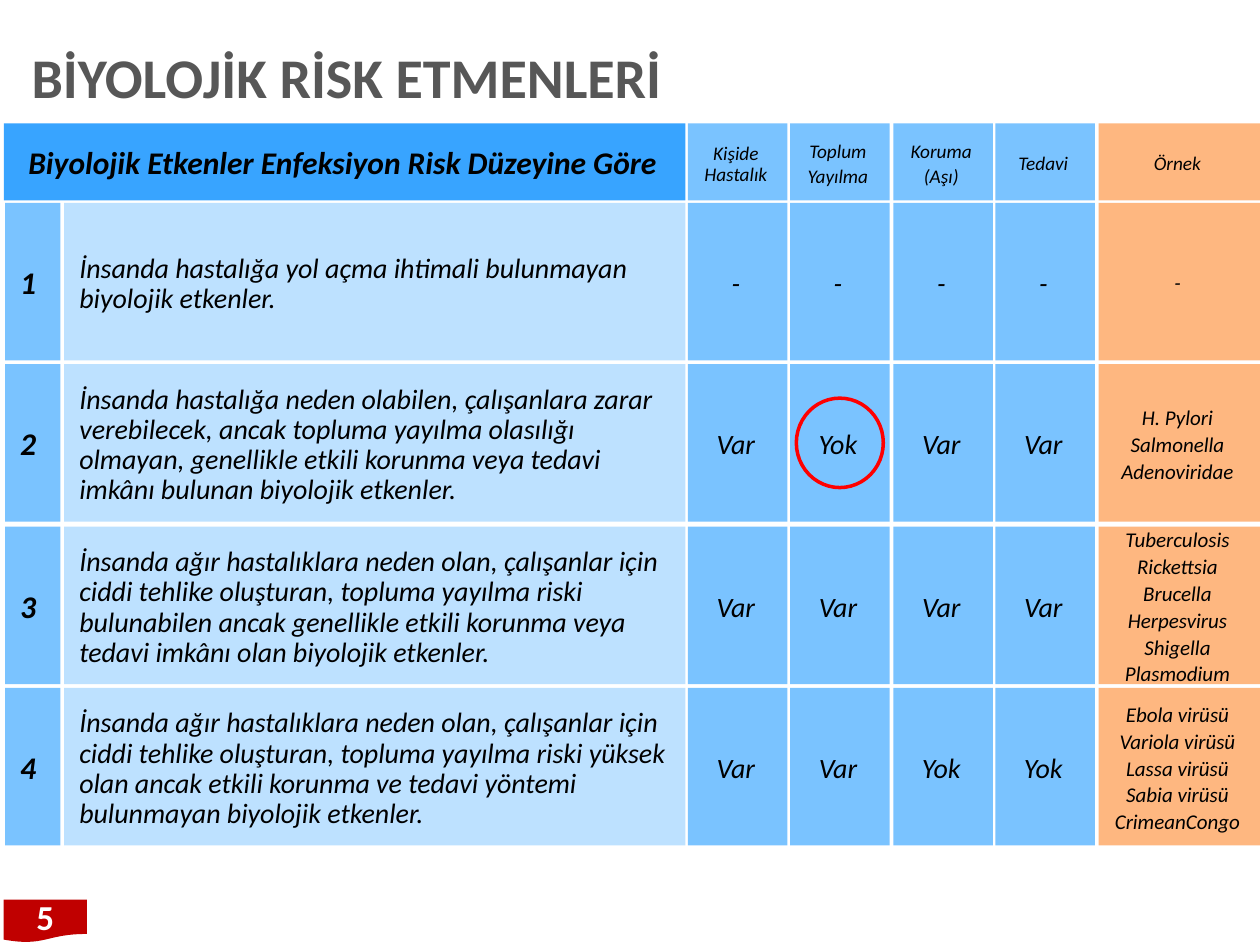
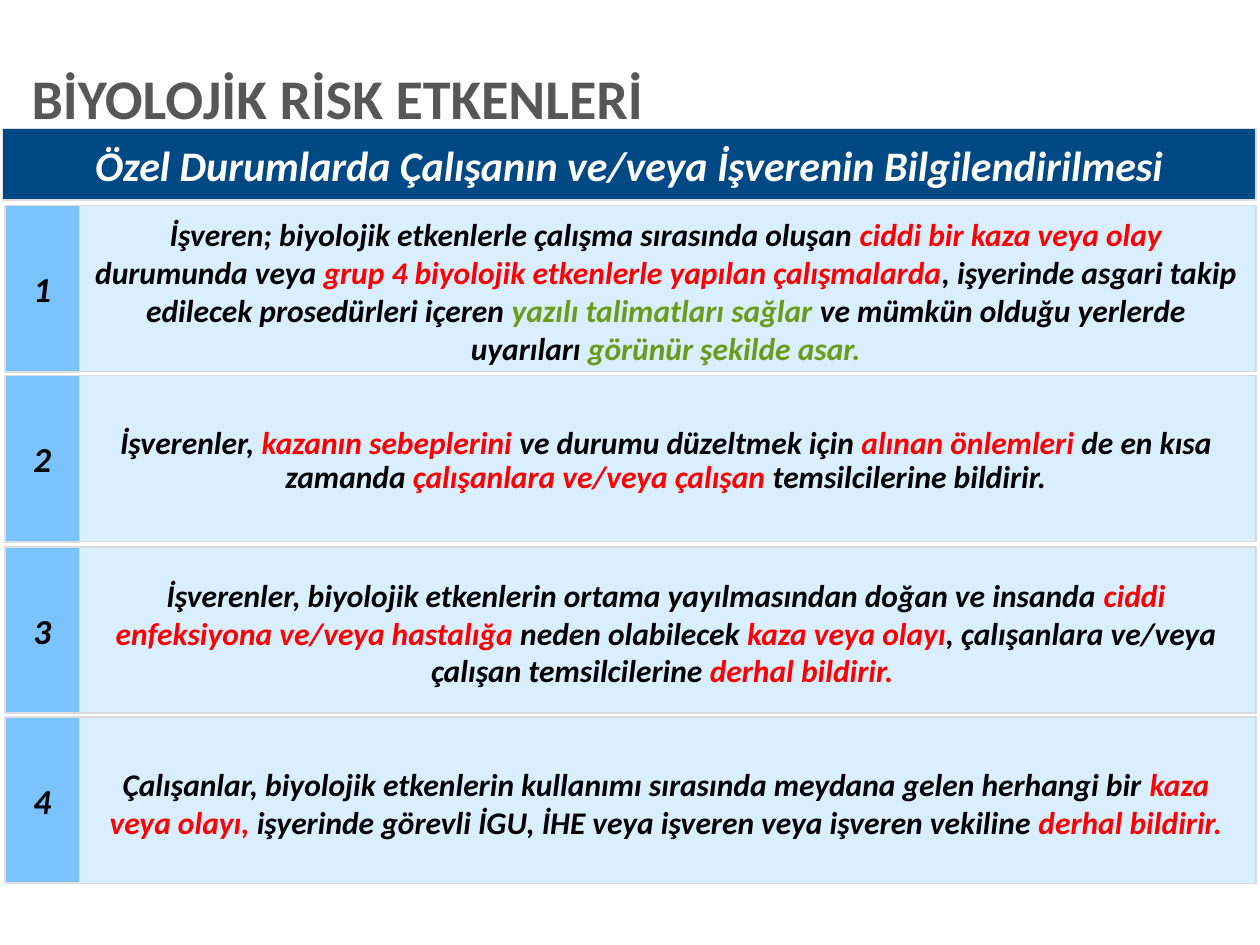
from dataclasses import dataclass, replace
from typing import NamedTuple

from lxml.etree import SubElement
from pptx import Presentation
from pptx.dml.color import RGBColor
from pptx.enum.shapes import MSO_SHAPE
from pptx.enum.text import MSO_ANCHOR, MSO_AUTO_SIZE, PP_ALIGN
from pptx.oxml.ns import qn
from pptx.util import Emu, Pt

EMU_PER_PX = 9144
FONT = "Calibri"
COLOURS = {
    "ink": "000000",
    "white": "FFFFFF",
    "title": "575757",
    "header": "38A4FF",
    "cell": "7AC3FF",
    "pale": "BDE1FF",
    "example": "FEB780",
    "banner": "004985",
    "border": "DDDDDD",
    "row_border": "D9D9D9",
    "alert": "FF0000",
    "action": "6B9B1A",
    "footer": "C00000",
}


class Area(NamedTuple):
    left: int
    top: int
    width: int
    height: int


class Span(NamedTuple):
    words: str
    colour: str = "ink"


class Border(NamedTuple):
    colour: str
    points: float


@dataclass(frozen=True)
class TextStyle:
    size: int
    bold: bool = False
    italic: bool = True
    align: PP_ALIGN = PP_ALIGN.CENTER
    line_spacing: float = 1.0
    space_after: float = 0
    margins: tuple[int, int, int, int] = (12, 12, 15, 8)


class RiskGroup(NamedTuple):
    description: str
    answers: list[str]
    examples: list[str]


class Duty(NamedTuple):
    spans: list[Span]
    line_spacing: float = 1.0
    space_after: float = 0


def compact(size: int, bold: bool = False, align: PP_ALIGN = PP_ALIGN.CENTER) -> TextStyle:
    return TextStyle(size, bold, align=align, line_spacing=0.9, space_after=size * 0.2)


TITLE = TextStyle(32, True, False, PP_ALIGN.LEFT, line_spacing=0.9, margins=(0, 5, 0, 5))
NUMBER = compact(18, True, PP_ALIGN.LEFT)
DESCRIPTION = compact(16, align=PP_ALIGN.LEFT)
ANSWER = compact(16)
EXAMPLE = compact(12)
COLUMN_HEAD = compact(11)
TABLE_HEAD = compact(18, True)
DUTY = TextStyle(18, True)
DUTY_NUMBER = TextStyle(20, True, margins=(0, 0, 0, 0))
BANNER = replace(DUTY_NUMBER, size=24)
PAGE_NUMBER = TextStyle(20, True, False, margins=(10, 5, 10, 5))

COLUMN_HEADS = [["Kişide Hastalık"], ["Toplum", "Yayılma"], ["Koruma", "(Aşı)"], ["Tedavi"]]
RISK_GROUPS = [
    RiskGroup(
        "İnsanda hastalığa yol açma ihtimali bulunmayan biyolojik etkenler.",
        ["-", "-", "-", "-"],
        ["-"],
    ),
    RiskGroup(
        "İnsanda hastalığa neden olabilen, çalışanlara zarar verebilecek, ancak topluma "
        "yayılma olasılığı olmayan, genellikle etkili korunma veya tedavi imkânı bulunan "
        "biyolojik etkenler.",
        ["Var", "Yok", "Var", "Var"],
        ["H. Pylori", "Salmonella", "Adenoviridae"],
    ),
    RiskGroup(
        "İnsanda ağır hastalıklara neden olan, çalışanlar için ciddi tehlike oluşturan, "
        "topluma yayılma riski bulunabilen ancak genellikle etkili korunma veya tedavi "
        "imkânı olan biyolojik etkenler.",
        ["Var", "Var", "Var", "Var"],
        ["Tuberculosis", "Rickettsia", "Brucella", "Herpesvirus", "Shigella", "Plasmodium"],
    ),
    RiskGroup(
        "İnsanda ağır hastalıklara neden olan, çalışanlar için ciddi tehlike oluşturan, "
        "topluma yayılma riski yüksek olan ancak etkili korunma ve tedavi yöntemi "
        "bulunmayan biyolojik etkenler.",
        ["Var", "Var", "Yok", "Yok"],
        ["Ebola virüsü", "Variola virüsü", "Lassa virüsü", "Sabia virüsü", "CrimeanCongo"],
    ),
]
DUTIES = [
    Duty([
        Span("İşveren; biyolojik etkenlerle çalışma sırasında oluşan "),
        Span("ciddi bir kaza veya olay ", "alert"),
        Span("durumunda veya "),
        Span("grup 4 biyolojik etkenlerle yapılan çalışmalarda", "alert"),
        Span(", işyerinde asgari takip edilecek prosedürleri içeren "),
        Span("yazılı talimatları sağlar ", "action"),
        Span("ve mümkün olduğu yerlerde uyarıları "),
        Span("görünür şekilde asar.", "action"),
    ]),
    Duty([
        Span("İşverenler, "),
        Span("kazanın sebeplerini ", "alert"),
        Span("ve durumu düzeltmek için "),
        Span("alınan önlemleri ", "alert"),
        Span("de en kısa zamanda "),
        Span("çalışanlara ve/veya çalışan ", "alert"),
        Span("temsilcilerine bildirir."),
    ], 0.9, 3.6),
    Duty([
        Span("İşverenler, biyolojik etkenlerin ortama yayılmasından doğan ve insanda "),
        Span("ciddi enfeksiyona ve/veya hastalığa", "alert"),
        Span(" neden olabilecek "),
        Span("kaza veya olayı", "alert"),
        Span(", çalışanlara ve/veya çalışan temsilcilerine "),
        Span("derhal bildirir. ", "alert"),
    ], space_after=6),
    Duty([
        Span("Çalışanlar, biyolojik etkenlerin kullanımı sırasında meydana gelen herhangi bir "),
        Span("kaza veya olayı, ", "alert"),
        Span("işyerinde görevli İGU, İHE veya işveren veya işveren vekiline "),
        Span("derhal bildirir.", "alert"),
    ], space_after=6),
]


def px(length: int) -> Emu:
    return Emu(length * EMU_PER_PX)


def rgb(name: str) -> RGBColor:
    return RGBColor.from_string(COLOURS[name])


def spread(first: int, last: int, count: int) -> list[int]:
    return [round(first + (last - first) * index / (count - 1)) for index in range(count)]


def write(box, paragraphs: list[list[Span]], style: TextStyle) -> None:
    frame = box.text_frame
    frame.word_wrap = True
    frame.auto_size = MSO_AUTO_SIZE.NONE
    frame.vertical_anchor = MSO_ANCHOR.MIDDLE
    (frame.margin_left, frame.margin_top,
     frame.margin_right, frame.margin_bottom) = map(px, style.margins)
    for index, spans in enumerate(paragraphs):
        paragraph = frame.add_paragraph() if index else frame.paragraphs[0]
        paragraph.alignment = style.align
        paragraph.line_spacing = style.line_spacing
        paragraph.space_before = Pt(0)
        paragraph.space_after = Pt(style.space_after)
        for span in spans:
            run = paragraph.add_run()
            run.text = span.words
            run.font.name = FONT
            run.font.size = Pt(style.size)
            run.font.bold = style.bold
            run.font.italic = style.italic
            run.font.color.rgb = rgb(span.colour)


def write_lines(box, lines: list[str], style: TextStyle, colour: str = "ink") -> None:
    write(box, [[Span(line, colour)] for line in lines], style)


def add_box(page, area: Area, fill: str | None, border: Border | None = None,
            kind: MSO_SHAPE = MSO_SHAPE.RECTANGLE, opacity: int = 100):
    box = page.shapes.add_shape(kind, *map(px, area))
    box.shadow.inherit = False
    if fill:
        box.fill.solid()
        box.fill.fore_color.rgb = rgb(fill)
        if opacity < 100:
            colour = box.fill._xPr.find(qn("a:solidFill"))[0]
            SubElement(colour, qn("a:alpha")).set("val", str(opacity * 1000))
    else:
        box.fill.background()
    if border:
        box.line.color.rgb = rgb(border.colour)
        box.line.width = Pt(border.points)
    else:
        box.line.fill.background()
    return box


def add_page(deck, title: str, title_top: int):
    page = deck.slides.add_slide(deck.slide_layouts[5])
    heading = page.shapes.title
    heading.left, heading.top, heading.width, heading.height = map(
        px, Area(25, title_top, 964, 71))
    write_lines(heading, [title], TITLE, "title")
    return page


def build_risk_groups(deck) -> None:
    page = add_page(deck, "BİYOLOJİK RİSK ETMENLERİ", 28)
    head_top, head_height, row_height = 98, 61, 125
    column_width, example_left, example_width = 79, 872, 128
    column_lefts = spread(546, 790, len(COLUMN_HEADS))
    row_tops = spread(161, 546, len(RISK_GROUPS))

    def cell(area: Area, fill: str, lines: list[str], style: TextStyle) -> None:
        write_lines(add_box(page, area, fill), lines, style)

    cell(Area(3, head_top, 541, head_height), "header",
         ["Biyolojik Etkenler Enfeksiyon Risk Düzeyine Göre"], TABLE_HEAD)
    for left, lines in zip(column_lefts, COLUMN_HEADS):
        cell(Area(left, head_top, column_width, head_height), "cell", lines, COLUMN_HEAD)
    cell(Area(example_left, head_top, example_width, head_height), "example",
         ["Örnek"], COLUMN_HEAD)

    for number, (top, group) in enumerate(zip(row_tops, RISK_GROUPS), 1):
        cell(Area(4, top, 44, row_height), "cell", [str(number)], NUMBER)
        cell(Area(51, top, 493, row_height), "pale", [group.description], DESCRIPTION)
        for left, answer in zip(column_lefts, group.answers):
            cell(Area(left, top, column_width, row_height), "cell", [answer], ANSWER)
        cell(Area(example_left, top, example_width, row_height), "example",
             group.examples, EXAMPLE)

    add_box(page, Area(632, 316, 69, 71), None, Border("alert", 2), MSO_SHAPE.OVAL)
    page_number = add_box(page, Area(3, 714, 66, 34), "footer",
                          kind=MSO_SHAPE.FLOWCHART_DOCUMENT)
    write_lines(page_number, ["5"], PAGE_NUMBER, "white")


def build_duties(deck) -> None:
    page = add_page(deck, "BİYOLOJİK RİSK ETKENLERİ", 45)
    row_height = 132
    border = Border("border", 1)
    for number, (top, duty) in enumerate(zip(spread(163, 569, len(DUTIES)), DUTIES), 1):
        number_box = add_box(page, Area(4, top, 59, row_height), "cell", border)
        write_lines(number_box, [str(number)], DUTY_NUMBER)
        duty_box = add_box(page, Area(63, top, 934, row_height), "pale",
                           Border("row_border", 0.75), opacity=56)
        write(duty_box, [duty.spans], replace(
            DUTY, line_spacing=duty.line_spacing, space_after=duty.space_after))
    banner = add_box(page, Area(2, 102, 995, 57), "banner", border)
    write_lines(banner, ["Özel Durumlarda Çalışanın ve/veya İşverenin Bilgilendirilmesi"],
                BANNER, "white")


def main() -> None:
    deck = Presentation()
    deck.slide_width, deck.slide_height = px(1000), px(750)
    build_risk_groups(deck)
    build_duties(deck)
    deck.save("out.pptx")


if __name__ == "__main__":
    main()
